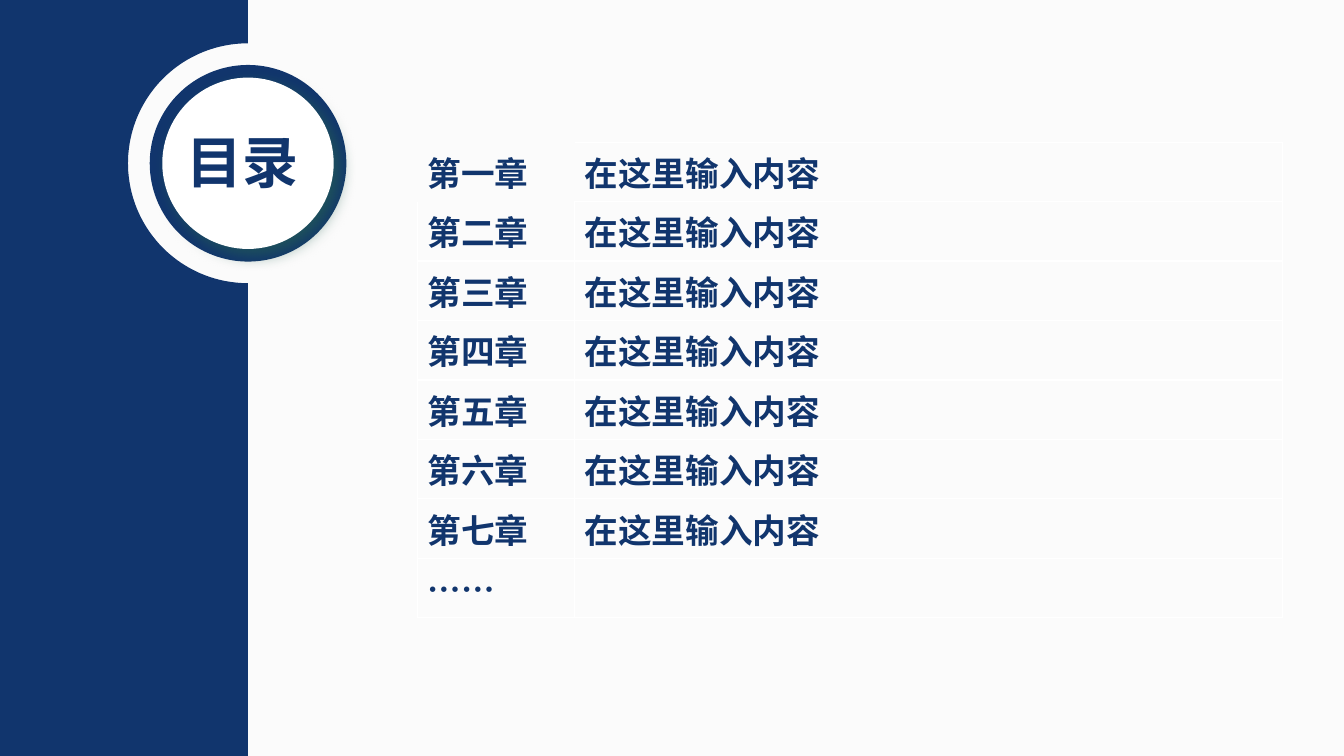
import math

import pptx
import pptx.dml.color
import pptx.enum.shapes
import pptx.enum.text
import pptx.oxml
import pptx.oxml.ns
import pptx.util
from pptx.util import Inches

FONT = "Noto Sans CJK SC"
COLORS = {"navy": "11356D", "white": "FFFFFF", "page": "FBFBFB", "shade": "286451"}
ROWS = [(f"第{num}章", "在这里输入内容") for num in "一二三四五六七"] + [("……", "")]
HUB = (2.46, 1.62)  # centre of the notch and of the badge
NOTCH = 1.19


def color(name):
    return pptx.dml.color.RGBColor.from_string(COLORS[name])


def element(xml):
    ns = pptx.oxml.ns.nsdecls("a")
    return pptx.oxml.parse_xml(xml.replace(">", f" {ns}>", 1))


def paint(shape, name):
    shape.shadow.inherit = False
    shape.fill.solid()
    shape.fill.fore_color.rgb = color(name)
    shape.line.fill.background()


def style(frame, size):
    for run in frame.paragraphs[0].runs:
        font = run.font
        font.name, font.size, font.bold = FONT, pptx.util.Pt(size), True
        font.color.rgb = color("navy")
        font._element.find(pptx.oxml.ns.qn("a:latin")).addnext(
            element(f'<a:ea typeface="{FONT}"></a:ea>'))


def add_panel(slide):
    x, y = HUB
    arc = [(x - NOTCH * math.sin(math.radians(deg)), y - NOTCH * math.cos(math.radians(deg)))
           for deg in range(0, 181, 2)]
    points = [(x, 0)] + arc + [(x, 7.5), (0, 7.5)]
    form = slide.shapes.build_freeform(0, 0)
    form.add_line_segments([(Inches(px), Inches(py)) for px, py in points], close=True)
    paint(form.convert_to_shape(), "navy")


def add_disc(slide, size, name):
    left, top = (Inches(mid - size / 2) for mid in HUB)
    disc = slide.shapes.add_shape(
        pptx.enum.shapes.MSO_SHAPE.OVAL, left, top, Inches(size), Inches(size))
    paint(disc, name)
    return disc


def add_shade(shape):
    effects = shape._element.spPr.find(pptx.oxml.ns.qn("a:effectLst"))
    effects.append(element(
        f'<a:outerShdw blurRad="{pptx.util.Pt(12)}" dist="{pptx.util.Pt(6)}" '
        'dir="2700000" algn="tl" rotWithShape="0">'
        f'<a:srgbClr val="{COLORS["shade"]}"><a:alpha val="64000"/></a:srgbClr>'
        '</a:outerShdw>'))


def set_title(slide, text):
    title = slide.shapes.title
    title.left, title.top = Inches(1.48), Inches(1.21)
    title.width, title.height = Inches(1.85), Inches(0.77)
    frame = title.text_frame
    frame.text = text
    frame.word_wrap = True
    frame.auto_size = pptx.enum.text.MSO_AUTO_SIZE.NONE
    frame.vertical_anchor = pptx.enum.text.MSO_ANCHOR.MIDDLE
    frame.paragraphs[0].alignment = pptx.enum.text.PP_ALIGN.CENTER
    style(frame, 40)
    slide.shapes._spTree.append(title._element)  # bring above the badge


def set_sides(cell, sides):
    props = cell._tc.get_or_add_tcPr()
    for index, side in enumerate("LRTB"):
        if side in sides:
            width = pptx.util.Pt(1)
            fill = f'<a:solidFill><a:srgbClr val="{COLORS["white"]}"/></a:solidFill>'
        else:
            width, fill = 0, "<a:noFill/>"
        props.insert(index, element(f'<a:ln{side} w="{width}">{fill}</a:ln{side}>'))


def add_list(slide):
    frame = slide.shapes.add_table(
        len(ROWS), 2, Inches(4.14), Inches(1.41), Inches(8.58), Inches(0.59 * len(ROWS)))
    table = frame.table
    table.first_row = table.horz_banding = False
    for col, width in zip(table.columns, (1.56, 7.02)):
        col.width = Inches(width)
    # The top left cell has no borders, so its neighbours drop the shared side
    bare = {(0, 0): "", (0, 1): "RTB", (1, 0): "LRB"}
    for r, texts in enumerate(ROWS):
        table.rows[r].height = Inches(0.59)
        for c, text in enumerate(texts):
            cell = table.cell(r, c)
            cell.text_frame.text = text
            cell.vertical_anchor = pptx.enum.text.MSO_ANCHOR.MIDDLE
            cell.fill.background()
            style(cell.text_frame, 24)
            set_sides(cell, bare.get((r, c), "LRTB"))


def main():
    deck = pptx.Presentation()
    deck.slide_width, deck.slide_height = Inches(13.33), Inches(7.5)
    slide = deck.slides.add_slide(deck.slide_layouts[5])
    slide.background.fill.solid()
    slide.background.fill.fore_color.rgb = color("page")
    # Side panel and round badge
    add_panel(slide)
    add_disc(slide, 1.95, "navy")
    add_shade(add_disc(slide, 1.7, "white"))
    set_title(slide, "目录")
    # Chapter list
    add_list(slide)
    deck.save("out.pptx")


if __name__ == "__main__":
    main()
